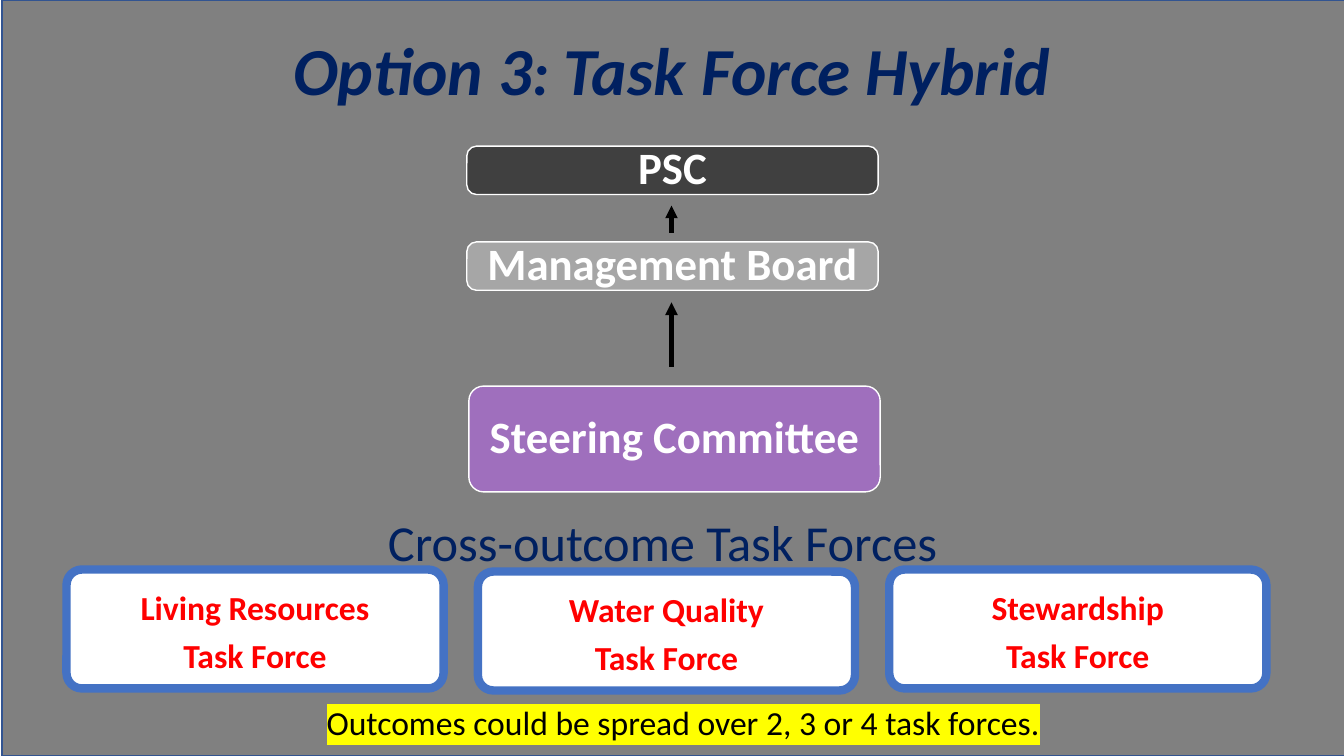
from dataclasses import dataclass

from lxml.etree import SubElement
from pptx import Presentation
from pptx.dml.color import RGBColor
from pptx.enum.shapes import MSO_CONNECTOR, MSO_SHAPE
from pptx.enum.text import MSO_ANCHOR, PP_ALIGN
from pptx.oxml import parse_xml
from pptx.oxml.ns import nsdecls, qn
from pptx.shapes.autoshape import Shape
from pptx.slide import Slide
from pptx.text.text import _Paragraph
from pptx.util import Inches, Pt

FONT = "Calibri"
WHITE = RGBColor(0xFF, 0xFF, 0xFF)
BLACK = RGBColor(0x00, 0x00, 0x00)
NAVY = RGBColor(0x00, 0x20, 0x60)
RED = RGBColor(0xFF, 0x00, 0x00)
BLUE = RGBColor(0x44, 0x72, 0xC4)
PURPLE = RGBColor(0x9F, 0x6F, 0xBD)
LIGHT_GRAY = RGBColor(0xA6, 0xA6, 0xA6)
DARK_GRAY = RGBColor(0x40, 0x40, 0x40)
BACKDROP = RGBColor(0x80, 0x80, 0x80)
BACKDROP_EDGE = RGBColor(0x32, 0x54, 0x91)


@dataclass(frozen=True)
class Frame:
    left: float
    top: float
    width: float
    height: float


@dataclass(frozen=True)
class BoxStyle:
    fill: RGBColor
    line: RGBColor
    line_width: float
    corner: float = 0


@dataclass(frozen=True)
class Level:
    name: str
    frame: Frame
    fill: RGBColor
    corner: float


LEVELS = [
    Level("PSC", Frame(4.63, 1.45, 4.08, 0.48), DARK_GRAY, 0.2),
    Level("Management Board", Frame(4.63, 2.4, 4.08, 0.48), LIGHT_GRAY, 0.2),
    Level("Steering Committee", Frame(4.65, 3.83, 4.08, 1.05), PURPLE, 0.14),
]
ARROW_X = 6.66
ARROW_SPANS = [(3.64, 3.0), (2.31, 2.04)]

TASK_FORCES = [("Living Resources", 5.65), ("Water Quality", 5.67), ("Stewardship", 5.65)]
TASK_FORCE_LEFT = 0.66
TASK_FORCE_PITCH = 4.08
TASK_FORCE_STYLE = BoxStyle(WHITE, BLUE, 6, 0.13)


def add_box(page: Slide, frame: Frame, style: BoxStyle) -> Shape:
    """Add a rectangle, rounded when the style has a corner."""
    kind = MSO_SHAPE.ROUNDED_RECTANGLE if style.corner else MSO_SHAPE.RECTANGLE
    box = page.shapes.add_shape(kind, Inches(frame.left), Inches(frame.top),
                                Inches(frame.width), Inches(frame.height))
    if style.corner:
        box.adjustments[0] = style.corner
    box.shadow.inherit = False
    box.fill.solid()
    box.fill.fore_color.rgb = style.fill
    box.line.color.rgb = style.line
    box.line.width = Pt(style.line_width)
    return box


def add_text_box(page: Slide, frame: Frame) -> Shape:
    box = page.shapes.add_textbox(Inches(frame.left), Inches(frame.top),
                                  Inches(frame.width), Inches(frame.height))
    box.text_frame.word_wrap = True
    return box


def set_insets(box: Shape, left: float, top: float, right: float, bottom: float) -> None:
    text = box.text_frame
    text.margin_left, text.margin_top = Inches(left), Inches(top)
    text.margin_right, text.margin_bottom = Inches(right), Inches(bottom)


def style_para(para: _Paragraph, size: float, color: RGBColor, bold: bool = False,
               align: PP_ALIGN = PP_ALIGN.CENTER, spacing: float = 0.9) -> None:
    para.alignment = align
    para.line_spacing = spacing
    para.font.name = FONT
    para.font.size = Pt(size)
    para.font.bold = bold
    para.font.color.rgb = color


def add_title(page: Slide) -> None:
    box = add_text_box(page, Frame(0, 0.17, 13.33, 1.12))
    box.text_frame.vertical_anchor = MSO_ANCHOR.MIDDLE
    para = box.text_frame.paragraphs[0]
    style_para(para, 48, NAVY, bold=True)
    para.font.italic = True
    for words, size in [("Option 3", 48), (": ", 44), ("Task Force Hybrid", 48)]:
        span = para.add_run()
        span.text = words
        span.font.size = Pt(size)


def add_level(page: Slide, level: Level) -> None:
    box = add_box(page, level.frame, BoxStyle(level.fill, WHITE, 1, level.corner))
    set_insets(box, 0.16, 0.16, 0.16, 0.16)
    box.text_frame.vertical_anchor = MSO_ANCHOR.MIDDLE
    box.text_frame.text = level.name
    style_para(box.text_frame.paragraphs[0], 32, WHITE, bold=True)


def add_up_arrow(page: Slide, start: float, end: float) -> None:
    arrow = page.shapes.add_connector(MSO_CONNECTOR.STRAIGHT, Inches(ARROW_X), Inches(start),
                                      Inches(ARROW_X), Inches(end))
    arrow.line.color.rgb = BLACK
    arrow.line.width = Pt(3)
    SubElement(arrow.line._get_or_add_ln(), qn("a:tailEnd"), type="triangle")
    SubElement(arrow._element.spPr, qn("a:effectLst"))


def add_task_force(page: Slide, name: str, left: float, top: float) -> None:
    box = add_box(page, Frame(left, top, 3.74, 1.18), TASK_FORCE_STYLE)
    set_insets(box, 0.1, 0.17, 0.1, 0.05)
    box.text_frame.vertical_anchor = MSO_ANCHOR.TOP
    box.text_frame.text = f"{name}\nTask Force"
    for para in box.text_frame.paragraphs:
        style_para(para, 24, RED, bold=True)
        para.space_after = Pt(8.4)


def add_task_force_heading(page: Slide) -> None:
    box = add_text_box(page, Frame(3.75, 5.02, 5.7, 0.71))
    box.text_frame.text = "Cross-outcome Task Forces"
    style_para(box.text_frame.paragraphs[0], 36, NAVY, align=PP_ALIGN.LEFT, spacing=1.0)


def add_highlighted_note(page: Slide) -> None:
    box = add_text_box(page, Frame(3.01, 6.98, 7.53, 0.33))
    set_insets(box, 0.23, 0.03, 0.1, 0.03)
    para = box.text_frame.paragraphs[0]
    style_para(para, 24, BLACK, align=PP_ALIGN.LEFT)
    span = para.add_run()
    span.text = "Outcomes could be spread over 2, 3 or 4 task forces."
    span.font.color.rgb = BLACK
    highlight = parse_xml(f'<a:highlight {nsdecls("a")}><a:srgbClr val="FFFF00"/></a:highlight>')
    span.font._element.find(qn("a:solidFill")).addnext(highlight)


def main() -> None:
    deck = Presentation()
    deck.slide_width, deck.slide_height = Inches(13.33), Inches(7.5)
    page = deck.slides.add_slide(deck.slide_layouts[6])

    add_box(page, Frame(0.02, 0, 13.33, 7.5), BoxStyle(BACKDROP, BACKDROP_EDGE, 1))
    add_title(page)
    for level in LEVELS:
        add_level(page, level)
    for start, end in ARROW_SPANS:
        add_up_arrow(page, start, end)
    add_task_force_heading(page)
    for column, (name, top) in enumerate(TASK_FORCES):
        add_task_force(page, name, TASK_FORCE_LEFT + column * TASK_FORCE_PITCH, top)
    add_highlighted_note(page)

    deck.save("out.pptx")


if __name__ == "__main__":
    main()
